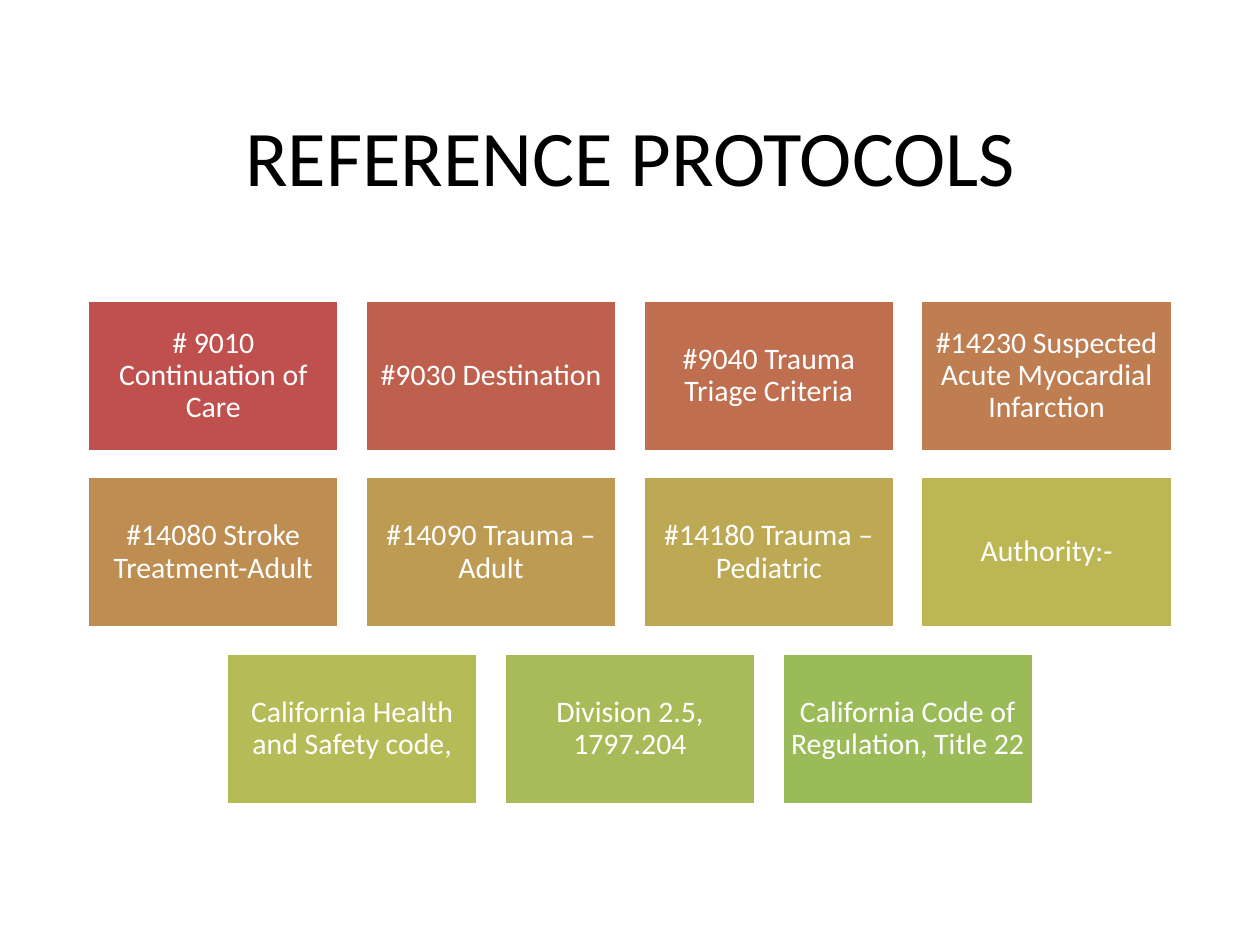
from dataclasses import dataclass

from pptx import Presentation
from pptx.dml.color import RGBColor as RGB
from pptx.enum.shapes import MSO_SHAPE as Shape
from pptx.enum.text import MSO_ANCHOR as Anchor, MSO_AUTO_SIZE as AutoSize, PP_ALIGN as Align
from pptx.slide import Slide
from pptx.util import Cm, Pt


@dataclass(frozen=True)
class Theme:
    font: str = "Calibri"
    title_size: float = 45
    tile_size: float = 17
    ink: str = "000000"
    paper: str = "FFFFFF"


@dataclass(frozen=True)
class Tile:
    text: str
    fill: str


@dataclass(frozen=True)
class Grid:
    """Tile grid in centimetres; every row is centred on the slide."""
    slide_w: float = 25.4
    top: float = 6.05
    tile_w: float = 5.08
    tile_h: float = 3.05
    pitch_x: float = 5.6
    pitch_y: float = 3.56
    columns: int = 4

    def row_left(self, count: int) -> float:
        return (self.slide_w - (count - 1) * self.pitch_x - self.tile_w) / 2


THEME = Theme()
GRID = Grid()
TILES = [
    Tile("# 9010 Continuation of Care", "C0504D"),
    Tile("#9030 Destination", "BF604E"),
    Tile("#9040 Trauma Triage Criteria", "BF6F4F"),
    Tile("#14230 Suspected Acute Myocardial Infarction", "BE7E51"),
    Tile("#14080 Stroke Treatment-Adult", "BE8D52"),
    Tile("#14090 Trauma – Adult", "BD9B53"),
    Tile("#14180 Trauma – Pediatric", "BDA954"),
    Tile("Authority:-", "BCB655"),
    Tile("California Health and Safety code,", "B5BC57"),
    Tile("Division 2.5, 1797.204", "A8BB58"),
    Tile("California Code of Regulation, Title 22", "9BBB59"),
]


def style_text(tf, size: float, color: str) -> None:
    tf.word_wrap = True
    tf.auto_size = AutoSize.NONE
    tf.vertical_anchor = Anchor.MIDDLE
    p = tf.paragraphs[0]
    p.alignment = Align.CENTER
    p.font.name = THEME.font
    p.font.size = Pt(size)
    p.font.color.rgb = RGB.from_string(color)


def add_title(s: Slide, text: str) -> None:
    sp = s.shapes.title
    sp.left, sp.top, sp.width, sp.height = Cm(1.75), Cm(1.55), Cm(21.9), Cm(3.15)
    sp.text_frame.text = text
    style_text(sp.text_frame, THEME.title_size, THEME.ink)


def add_tile(s: Slide, tile: Tile, left: float, top: float) -> None:
    sp = s.shapes.add_shape(Shape.RECTANGLE, Cm(left), Cm(top),
                            Cm(GRID.tile_w), Cm(GRID.tile_h))
    sp.shadow.inherit = False
    sp.fill.solid()
    sp.fill.fore_color.rgb = RGB.from_string(tile.fill)
    sp.line.color.rgb = RGB.from_string(THEME.paper)
    sp.line.width = Pt(2)
    tf = sp.text_frame
    tf.margin_left = tf.margin_right = tf.margin_top = tf.margin_bottom = Cm(0.18)
    tf.text = tile.text
    tf.paragraphs[0].line_spacing = 0.9
    style_text(tf, THEME.tile_size, THEME.paper)


def add_tiles(s: Slide, tiles: list[Tile]) -> None:
    for start in range(0, len(tiles), GRID.columns):
        row = tiles[start:start + GRID.columns]
        left = GRID.row_left(len(row))
        top = GRID.top + start // GRID.columns * GRID.pitch_y
        for i, tile in enumerate(row):
            add_tile(s, tile, left + i * GRID.pitch_x, top)


def main() -> None:
    prs = Presentation()
    prs.slide_width, prs.slide_height = Cm(GRID.slide_w), Cm(19.05)
    s = prs.slides.add_slide(prs.slide_layouts[5])  # title only

    # Heading
    add_title(s, "REFERENCE PROTOCOLS")
    # Protocol tiles
    add_tiles(s, TILES)

    prs.save("out.pptx")


if __name__ == "__main__":
    main()
